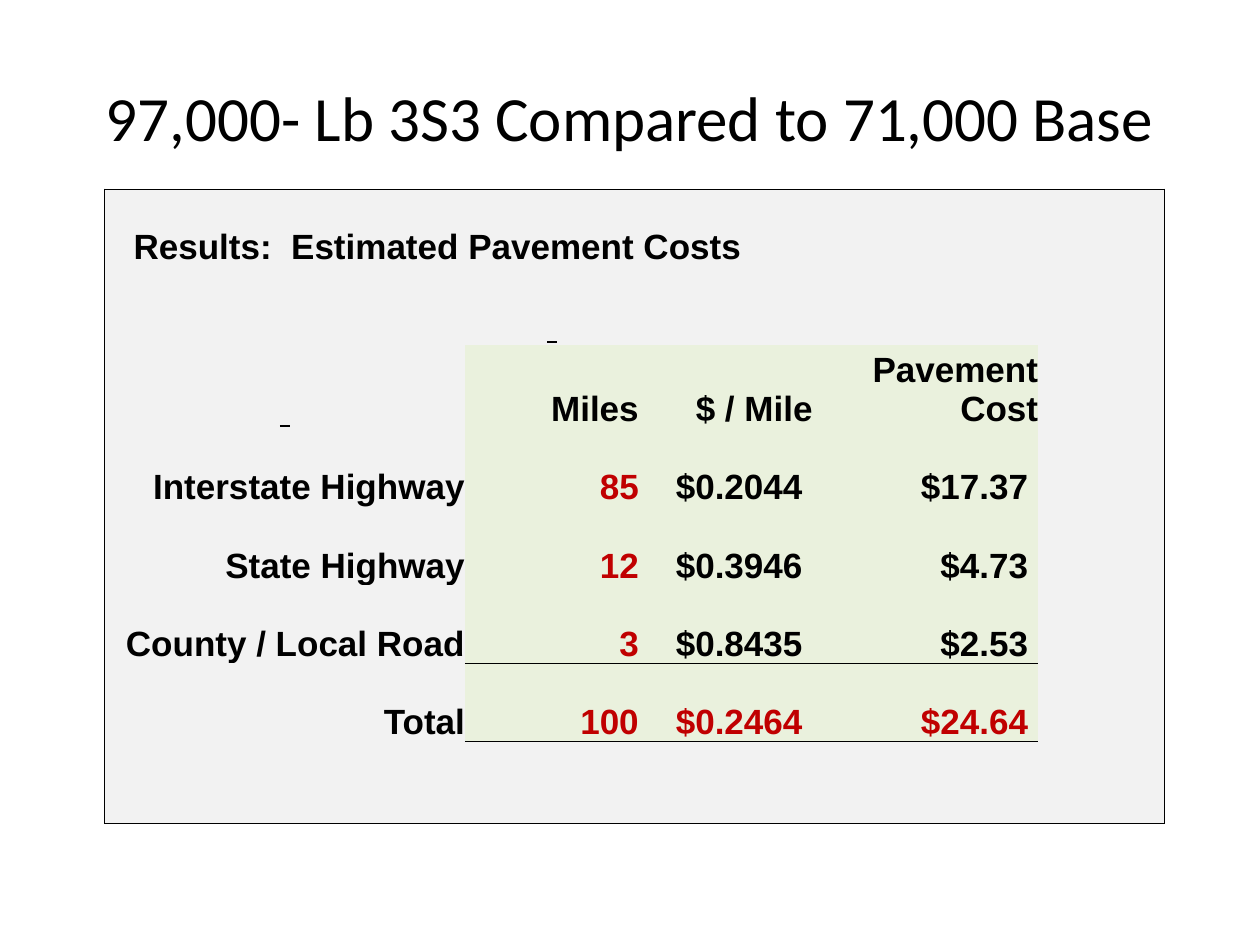
from pptx import Presentation
from pptx.dml.color import RGBColor
from pptx.enum.text import MSO_ANCHOR as Anchor, PP_ALIGN as Align
from pptx.oxml import parse_xml
from pptx.oxml.ns import nsdecls
from pptx.util import Inches, Pt

BLACK = RGBColor(0x00, 0x00, 0x00)
RED = RGBColor(0xC0, 0x00, 0x00)
GRAY = RGBColor(0xF2, 0xF2, 0xF2)
GREEN = RGBColor(0xEA, 0xF1, 0xDD)

NO_STYLE = "{2D5ABB26-0587-4C30-8999-92F81FD0307C}"
COLS = [2.86, 1.38, 1.38, 1.79, 1]
ROWS = [0.62] * 7 + [0.65]
HEADING = "Results:  Estimated Pavement Costs"
BODY = [
    [" ", "Miles", "$ / Mile", "Pavement Cost"],
    ["Interstate Highway", "85", "$0.2044", "$17.37"],
    ["State Highway", "12", "$0.3946", "$4.73"],
    ["County / Local Road", "3", "$0.8435", "$2.53"],
    ["Total", "100", "$0.2464", "$24.64"],
]
FIRST = 2
TOTAL = FIRST + len(BODY) - 1
TABLE_FONT = {"name": "Arial", "size": Pt(20), "bold": True}


def write(tf, text, align, color, font):
    p = tf.paragraphs[0]
    p.alignment = align
    r = p.add_run()
    r.text = text
    r.font.color.rgb = color
    for key, value in font.items():
        setattr(r.font, key, value)


def add_title(s, box, text):
    tf = s.shapes.add_textbox(*map(Inches, box)).text_frame
    tf.word_wrap = True
    tf.vertical_anchor = Anchor.MIDDLE
    write(tf, text, Align.CENTER, BLACK, {"name": "Calibri", "size": Pt(36)})


def add_borders(cell, sides):
    tc_pr = cell._tc.get_or_add_tcPr()
    for side in "LRTB":
        if side in sides:
            tc_pr.append(parse_xml(
                f'<a:ln{side} {nsdecls("a")} w="{Pt(0.5)}"><a:solidFill>'
                f'<a:srgbClr val="{BLACK}"/></a:solidFill></a:ln{side}>'))


def format_cell(cell, row, col):
    in_grid = FIRST <= row <= TOTAL and 1 <= col <= 3
    rules = {
        "L": col == 0,
        "R": col == len(COLS) - 1,
        "T": row == 0 or (in_grid and row == TOTAL),
        "B": row == len(ROWS) - 1 or (in_grid and row == TOTAL - 1),
    }
    add_borders(cell, [side for side, drawn in rules.items() if drawn])
    cell.fill.solid()
    cell.fill.fore_color.rgb = GREEN if in_grid else GRAY
    cell.vertical_anchor = Anchor.BOTTOM
    for side in ("left", "right", "top", "bottom"):
        setattr(cell, f"margin_{side}", 0)


def fill_cell(cell, row, col, text):
    blank = text == " "
    money = row > FIRST and col >= 2
    red = row > FIRST and (col == 1 or (row == TOTAL and col >= 2))
    if money:
        cell.margin_right = Inches(0.08)
    write(cell.text_frame, text, Align.CENTER if blank else Align.RIGHT,
          RED if red else BLACK, {**TABLE_FONT, "underline": blank})


def add_cost_table(s, box):
    frame = s.shapes.add_table(len(ROWS), len(COLS), *map(Inches, box))
    table = frame.table
    table.first_row = table.horz_banding = False
    table._tbl.tblPr[0].text = NO_STYLE
    for column, width in zip(table.columns, COLS):
        column.width = Inches(width)
    for row, height in zip(table.rows, ROWS):
        row.height = Inches(height)
    for i in range(len(ROWS)):
        for j in range(len(COLS)):
            format_cell(table.cell(i, j), i, j)

    heading = table.cell(0, 0)
    heading.merge(table.cell(0, 2))
    heading.margin_left = Inches(0.23)
    write(heading.text_frame, HEADING, Align.LEFT, BLACK, TABLE_FONT)
    fill_cell(table.cell(1, 1), 1, 1, " ")
    for i, texts in enumerate(BODY, FIRST):
        for j, text in enumerate(texts):
            fill_cell(table.cell(i, j), i, j, text)


def main():
    prs = Presentation()
    prs.slide_width, prs.slide_height = Inches(10), Inches(7.5)
    s = prs.slides.add_slide(prs.slide_layouts[6])
    add_title(s, (0.5, 0.3, 9, 1.25), "97,000- Lb 3S3 Compared to 71,000 Base")
    add_cost_table(s, (0.83, 1.5, sum(COLS), sum(ROWS)))
    prs.save("out.pptx")


if __name__ == "__main__":
    main()
